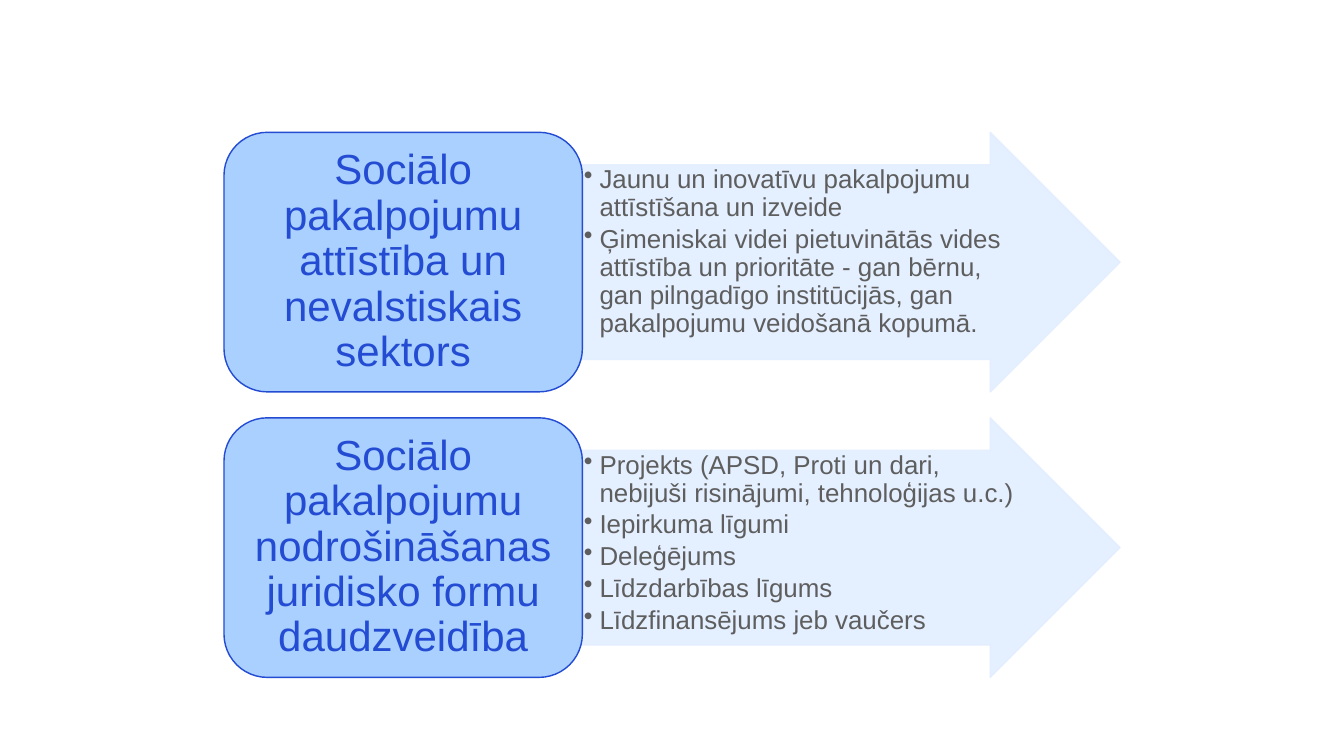
from dataclasses import dataclass

from lxml.etree import SubElement
from pptx import Presentation
from pptx.dml.color import RGBColor
from pptx.enum.shapes import MSO_SHAPE
from pptx.enum.text import MSO_ANCHOR, PP_ALIGN
from pptx.oxml.ns import qn
from pptx.util import Inches, Pt


@dataclass(frozen=True)
class Theme:
    font: str = "Arial"
    card_fill: str = "AAD0FF"
    card_accent: str = "244CD3"
    arrow_fill: str = "E2EEFF"
    body_text: str = "5E5E5E"
    heading_size: float = 60
    body_size: float = 37
    line_width: float = 2
    line_spacing: float = 0.9
    arrow_opacity: int = 90


THEME = Theme()
SLIDE_WIDTH, SLIDE_HEIGHT = 26.67, 15
LIST_WIDTH_SHARE = 2 / 3
TOP_SHARE = 0.175
ROW_HEIGHT = 5.15
ROW_PITCH = ROW_HEIGHT * 1.1
CARD_SHARE = 0.4
BULLET_INDENT = 0.31

TOPICS = [
    (
        "Sociālo pakalpojumu attīstība un nevalstiskais sektors",
        [
            "Jaunu un inovatīvu pakalpojumu attīstīšana un izveide",
            "Ģimeniskai videi pietuvinātās vides attīstība un prioritāte - gan bērnu, "
            "gan pilngadīgo institūcijās, gan pakalpojumu veidošanā kopumā.",
        ],
    ),
    (
        "Sociālo pakalpojumu nodrošināšanas juridisko formu daudzveidība",
        [
            "Projekts (APSD, Proti un dari, nebijuši risinājumi, tehnoloģijas u.c.)",
            "Iepirkuma līgumi",
            "Deleģējums",
            "Līdzdarbības līgums",
            "Līdzfinansējums jeb vaučers",
        ],
    ),
]


def add_panel(group, preset, box, fill, line):
    shape = group.shapes.add_shape(preset, *(Inches(length) for length in box))
    shape.shadow.inherit = False
    shape.fill.solid()
    shape.fill.fore_color.rgb = RGBColor.from_string(fill)
    shape.line.color.rgb = RGBColor.from_string(line)
    shape.line.width = Pt(THEME.line_width)
    return shape


def set_opacity(shape, percent):
    for color in shape._element.spPr.iter(qn("a:srgbClr")):
        SubElement(color, qn("a:alpha")).set("val", str(percent * 1000))


def set_frame(shape, anchor, horizontal, vertical):
    frame = shape.text_frame
    frame.word_wrap = True
    frame.vertical_anchor = anchor
    frame.margin_left = frame.margin_right = Inches(horizontal)
    frame.margin_top = frame.margin_bottom = Inches(vertical)
    return frame


def write_paragraph(paragraph, text, size, color, alignment, space_share):
    paragraph.alignment = alignment
    paragraph.line_spacing = THEME.line_spacing
    paragraph.space_after = Pt(size * space_share)
    run = paragraph.add_run()
    run.text = text
    run.font.name = THEME.font
    run.font.size = Pt(size)
    run.font.color.rgb = RGBColor.from_string(color)


def add_bullet(paragraph):
    properties = paragraph._p.get_or_add_pPr()
    properties.set("marL", str(Inches(BULLET_INDENT)))
    properties.set("indent", str(-Inches(BULLET_INDENT)))
    SubElement(properties, qn("a:buChar")).set("char", "•")


def add_detail_arrow(group, box, details):
    arrow = add_panel(group, MSO_SHAPE.RIGHT_ARROW, box, THEME.arrow_fill, THEME.arrow_fill)
    arrow.adjustments[0], arrow.adjustments[1] = 0.75, 0.5
    set_opacity(arrow, THEME.arrow_opacity)
    frame = set_frame(arrow, MSO_ANCHOR.TOP, 0.03, 0.03)
    for index, detail in enumerate(details):
        paragraph = frame.add_paragraph() if index else frame.paragraphs[0]
        write_paragraph(paragraph, detail, THEME.body_size, THEME.body_text, PP_ALIGN.LEFT, 0.15)
        paragraph.level = 1
        add_bullet(paragraph)


def add_heading_card(group, box, heading):
    card = add_panel(group, MSO_SHAPE.ROUNDED_RECTANGLE, box, THEME.card_fill, THEME.card_accent)
    frame = set_frame(card, MSO_ANCHOR.MIDDLE, 0.25, 0.12)
    write_paragraph(
        frame.paragraphs[0], heading, THEME.heading_size, THEME.card_accent, PP_ALIGN.CENTER, 0.35
    )


def add_topic_row(group, box, heading, details):
    left, top, width, height = box
    card_width = width * CARD_SHARE
    add_detail_arrow(group, (left + card_width, top, width - card_width, height), details)
    add_heading_card(group, (left, top, card_width, height), heading)


def main():
    presentation = Presentation()
    presentation.slide_width = Inches(SLIDE_WIDTH)
    presentation.slide_height = Inches(SLIDE_HEIGHT)
    slide = presentation.slides.add_slide(presentation.slide_layouts[6])
    group = slide.shapes.add_group_shape()
    width = SLIDE_WIDTH * LIST_WIDTH_SHARE
    left = (SLIDE_WIDTH - width) / 2
    for row, (heading, details) in enumerate(TOPICS):
        top = SLIDE_HEIGHT * TOP_SHARE + row * ROW_PITCH
        add_topic_row(group, (left, top, width, ROW_HEIGHT), heading, details)
    presentation.save("out.pptx")


if __name__ == "__main__":
    main()
